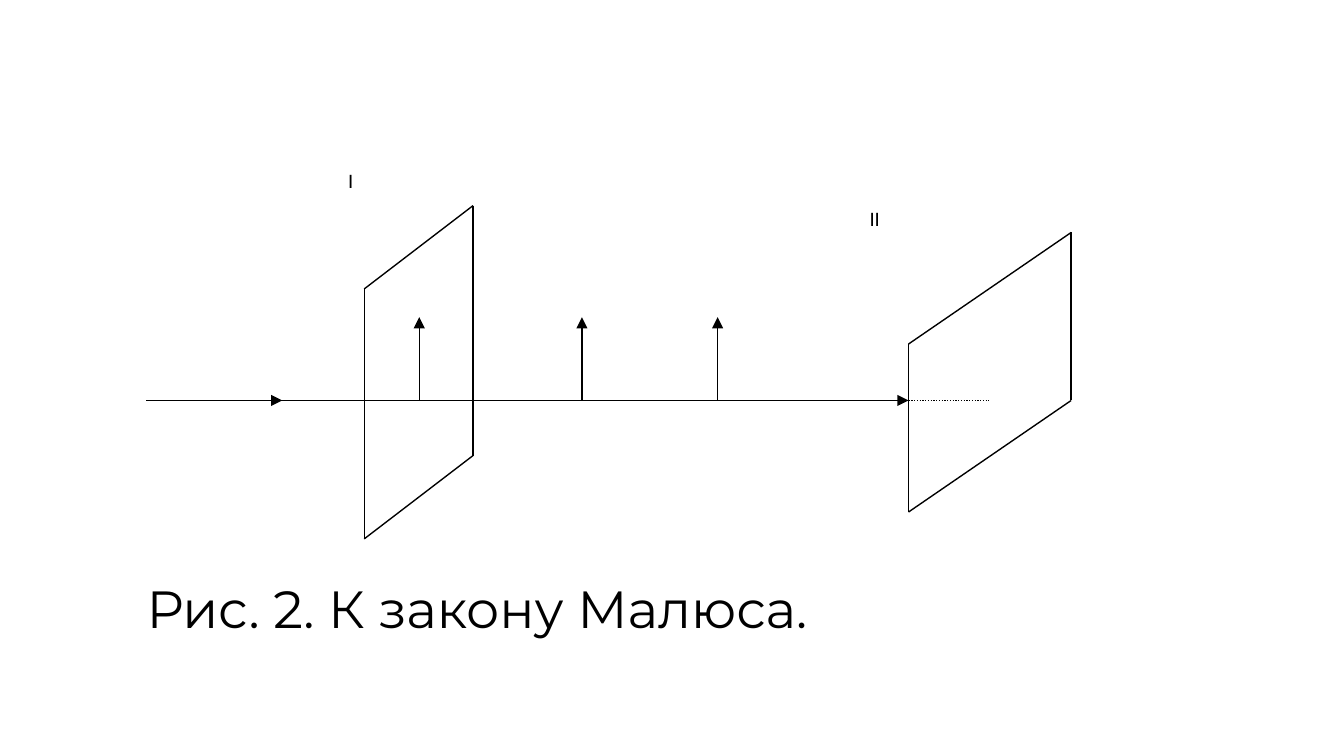
from lxml.etree import SubElement
from pptx import Presentation
from pptx.dml.color import RGBColor
from pptx.enum.dml import MSO_LINE
from pptx.enum.shapes import MSO_CONNECTOR, MSO_SHAPE
from pptx.enum.text import MSO_ANCHOR, PP_ALIGN
from pptx.oxml.ns import qn
from pptx.util import Emu, Pt

PX = 9144  # EMU per px, 100 px to the inch
COLORS = {"paper": "FFFFFF", "ink": "000000"}


def color(name):
    return RGBColor.from_string(COLORS[name])


def write_text(text_frame, text, font="Calibri", size=11, ink="ink", space_after=10):
    text_frame.word_wrap = True
    text_frame.vertical_anchor = MSO_ANCHOR.TOP
    text_frame.margin_left = text_frame.margin_right = 0
    text_frame.margin_top = text_frame.margin_bottom = 0
    paragraph = text_frame.paragraphs[0]
    paragraph.alignment = PP_ALIGN.LEFT
    paragraph.space_after = Pt(space_after)
    run = paragraph.add_run()
    run.text = text
    run.font.name = font
    run.font.size = Pt(size)
    run.font.color.rgb = color(ink)


class Diagram:
    """Holds the line style and the group of shapes on the current slide."""

    line_width = Pt(0.75)

    def __init__(self, slide):
        self.shapes = slide.shapes.add_group_shape().shapes

    def label(self, text, left, top, width, height, **text_format):
        box = [Emu(value * PX) for value in (left, top, width, height)]
        shape = self.shapes.add_shape(MSO_SHAPE.RECTANGLE, *box)
        shape.shadow.inherit = False
        shape.fill.solid()
        shape.fill.fore_color.rgb = color("paper")
        shape.line.fill.background()
        write_text(shape.text_frame, text, **text_format)

    def line(self, start, end, arrow=False, dash=None):
        points = [Emu(value * PX) for value in (*start, *end)]
        connector = self.shapes.add_connector(MSO_CONNECTOR.STRAIGHT, *points)
        connector.line.color.rgb = color("ink")
        connector.line.width = self.line_width
        if dash:
            connector.line.dash_style = dash
        if arrow:
            outline = connector.line._get_or_add_ln()
            SubElement(outline, qn("a:tailEnd"), type="triangle")
        SubElement(connector._element.spPr, qn("a:effectLst"))

    def plate(self, left, right, left_top, right_top, height):
        """Polarizer plate in perspective, with vertical sides."""
        for drop in (0, height):
            self.line((right, right_top + drop), (left, left_top + drop))
        for x, top in ((left, left_top), (right, right_top)):
            self.line((x, top), (x, top + height))


# Slide in 16:9
presentation = Presentation()
presentation.slide_width = Emu(1000 * PX)
presentation.slide_height = Emu(1000 * PX * 9 // 16)
slide = presentation.slides.add_slide(presentation.slide_layouts[6])
diagram = Diagram(slide)

# Plate numbers
diagram.label("II", 647, 153, 90, 83)
diagram.label("I", 259, 125, 90, 83)

# Polarizer and analyzer plates
diagram.plate(left=271, right=352, left_top=215, right_top=153, height=186)
diagram.plate(left=676, right=797, left_top=256, right_top=173, height=125)

# Light ray, dotted behind the analyzer
axis = 298
diagram.line((109, axis), (655, axis))
for start, end in ((130, 210), (615, 676)):
    diagram.line((start, axis), (end, axis), arrow=True)
diagram.line((676, axis), (736, axis), dash=MSO_LINE.ROUND_DOT)

# Oscillation vectors
for x in (312, 433, 534):
    diagram.line((x, axis), (x, axis - 62), arrow=True)

# Caption
diagram.label("Рис. 2. К закону Малюса.", 109, 429, 568, 55, font="Montserrat", size=28)

presentation.save("out.pptx")
